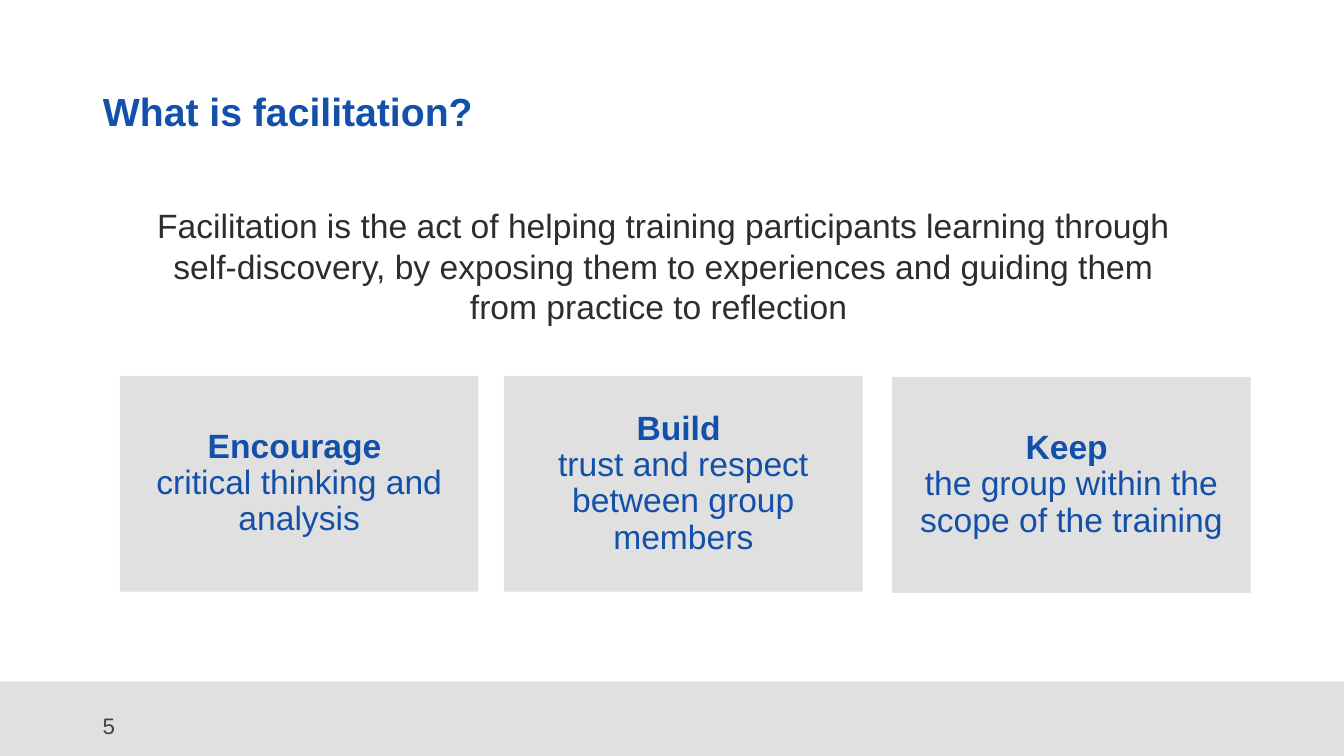
import pptx
import pptx.dml.color
import pptx.enum.shapes
import pptx.enum.text
import pptx.util

Cm = pptx.util.Cm
ALIGN = pptx.enum.text.PP_ALIGN
MIDDLE = pptx.enum.text.MSO_ANCHOR.MIDDLE

COLORS = {"blue": "1250A9", "grey": "E0E0E0", "body": "2D2D2D", "number": "424242"}

TASKS = [
    (3.02, 9.47, "Encourage ", "critical thinking and analysis"),
    (12.7, 9.47, "Build ", "trust and respect between group members"),
    (22.48, 9.5, "Keep ", "the group within the scope of the training"),
]


def rgb(name):
    return pptx.dml.color.RGBColor.from_string(COLORS[name])


def write(paragraph, text, size, color, bold=False, align=ALIGN.LEFT, spacing=1.0):
    paragraph.text = text
    paragraph.alignment = align
    paragraph.line_spacing = spacing
    paragraph.font.name = "Arial"
    paragraph.font.size = pptx.util.Pt(size)
    paragraph.font.bold = bold
    paragraph.font.color.rgb = rgb(color)


def add_title(slide, text):
    title = slide.shapes.title
    title.left, title.top, title.width, title.height = Cm(2.34), Cm(1.02), Cm(29.21), Cm(3.68)
    title.text_frame.vertical_anchor = MIDDLE
    write(title.text_frame.paragraphs[0], text, 28, "blue", bold=True, spacing=0.9)


def add_text(slide, left, top, width, height, text, size, color, align, anchor):
    frame = slide.shapes.add_textbox(Cm(left), Cm(top), Cm(width), Cm(height)).text_frame
    frame.word_wrap = True
    frame.vertical_anchor = anchor
    write(frame.paragraphs[0], text, size, color, align=align)


def add_panel(slide, left, top, width, height):
    panel = slide.shapes.add_shape(
        pptx.enum.shapes.MSO_SHAPE.RECTANGLE, Cm(left), Cm(top), Cm(width), Cm(height))
    panel.shadow.inherit = False
    panel.fill.solid()
    panel.fill.fore_color.rgb = rgb("grey")
    panel.line.fill.background()
    return panel


def add_task(slide, left, top, verb, detail):
    frame = add_panel(slide, left, top, 9.04, 5.44).text_frame
    frame.word_wrap = True
    frame.vertical_anchor = MIDDLE
    frame.margin_left = frame.margin_right = Cm(0.25)
    frame.margin_top = frame.margin_bottom = Cm(0.25)
    write(frame.paragraphs[0], verb, 24, "blue", True, ALIGN.CENTER, 0.9)
    write(frame.add_paragraph(), detail, 24, "blue", False, ALIGN.CENTER, 0.9)


def main():
    deck = pptx.Presentation()
    deck.slide_width, deck.slide_height = Cm(33.87), Cm(19.05)
    slide = deck.slides.add_slide(deck.slide_layouts[5])

    add_panel(slide, 0, 17.17, 33.87, 1.88)
    add_title(slide, "What is facilitation?")
    add_text(slide, 2.34, 17.78, 7.62, 1.02, "5", 16, "number", ALIGN.LEFT, MIDDLE)
    add_text(slide, 3.23, 5.05, 26.97, 3.33,
             "Facilitation is the act of helping training participants learning through "
             "self-discovery, by exposing them to experiences and guiding them from "
             "practice to reflection ",
             24, "body", ALIGN.CENTER, pptx.enum.text.MSO_ANCHOR.TOP)
    for task in TASKS:
        add_task(slide, *task)

    deck.save("out.pptx")


if __name__ == "__main__":
    main()
